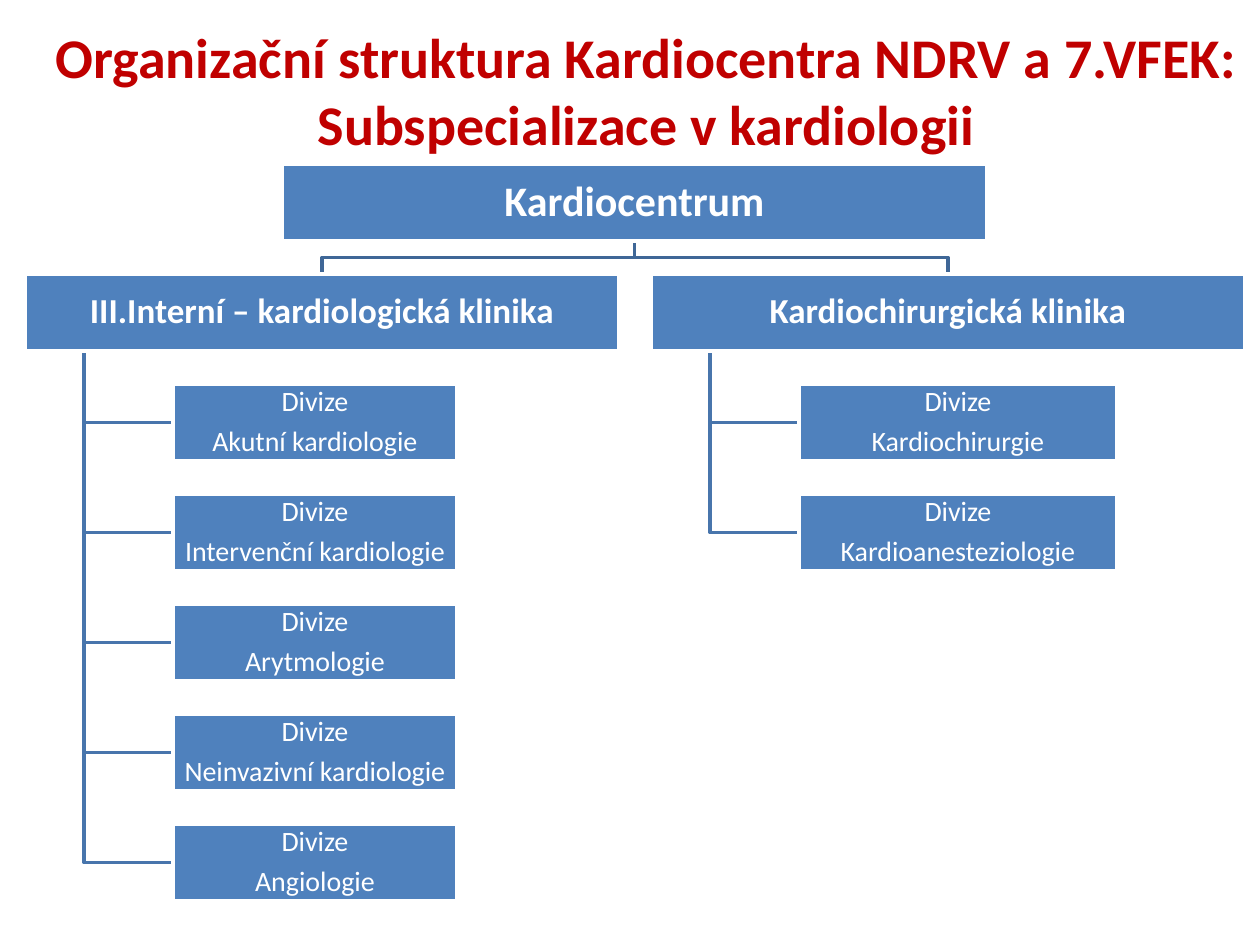
from pptx import Presentation
from pptx.dml.color import RGBColor
from pptx.enum.shapes import MSO_SHAPE as Shape
from pptx.enum.text import MSO_ANCHOR as Anchor, PP_ALIGN as Align
from pptx.util import Pt

TITLE = ["Organizační struktura Kardiocentra NDRV a 7.VFEK:",
         "Subspecializace v kardiologii"]
ROOT = "Kardiocentrum"
CLINICS = [
    dict(name="III.Interní – kardiologická klinika", left=25, width=284,
         units=["Akutní kardiologie", "Intervenční kardiologie", "Arytmologie",
                "Neinvazivní kardiologie", "Angiologie"]),
    dict(name="Kardiochirurgická klinika", left=651, width=318,
         units=["Kardiochirurgie", "Kardioanesteziologie"]),
]
COLORS = dict(title="C00000", box="4F81BD", white="FFFFFF",
              main="3F6797", branch="4875AC")

SCALE = 914400 / 126
BOX_H, PITCH = 77, 110
ROOT_X, ROOT_Y, ROOT_W = 282, 164, 705
CLINIC_Y, CLINIC_W = ROOT_Y + PITCH, 594
TRUNK_DX, UNIT_DX = 59, 148


def emu(px):
    return round(px * SCALE)


def color(name):
    return RGBColor.from_string(COLORS[name])


def write(frame, lines, size, bold, ink):
    for i, line in enumerate(lines):
        para = frame.paragraphs[0] if i == 0 else frame.add_paragraph()
        para.alignment = Align.CENTER
        run = para.add_run()
        run.text = line
        font = run.font
        font.name, font.size, font.bold = "Calibri", Pt(size), bold
        font.color.rgb = color(ink)


def add_box(shapes, x, y, w, lines, size, bold=False):
    box = shapes.add_shape(Shape.RECTANGLE, *map(emu, (x, y, w, BOX_H)))
    box.shadow.inherit = False
    box.fill.solid()
    box.fill.fore_color.rgb = color("box")
    box.line.color.rgb = color("white")
    box.line.width = Pt(2)
    frame = box.text_frame
    frame.word_wrap = True
    frame.vertical_anchor = Anchor.MIDDLE
    frame.margin_left = frame.margin_right = emu(1)
    frame.margin_top = frame.margin_bottom = emu(1)
    write(frame, lines, size, bold, "white")
    for para in frame.paragraphs:
        para.line_spacing = 0.9
        para.space_after = Pt(0.35 * size)


def add_path(shapes, points, ink):
    start, *rest = [(emu(x), emu(y)) for x, y in points]
    pen = shapes.build_freeform(*start)
    pen.add_line_segments(rest, close=False)
    path = pen.convert_to_shape()
    path.shadow.inherit = False
    path.fill.background()
    path.line.color.rgb = color(ink)
    path.line.width = Pt(2)


def add_links(shapes):
    mid, low = ROOT_X + ROOT_W / 2, ROOT_Y + BOX_H
    bend = (low + CLINIC_Y) / 2
    for clinic in CLINICS:
        top = clinic["left"] + CLINIC_W / 2
        add_path(shapes, [(mid, low), (mid, bend), (top, bend),
                          (top, CLINIC_Y)], "main")
        trunk = clinic["left"] + TRUNK_DX
        for row in range(len(clinic["units"]), 0, -1):
            y = CLINIC_Y + row * PITCH + BOX_H / 2
            add_path(shapes, [(trunk, CLINIC_Y + BOX_H), (trunk, y),
                              (clinic["left"] + UNIT_DX, y)], "branch")


def add_boxes(shapes):
    add_box(shapes, ROOT_X, ROOT_Y, ROOT_W, [ROOT], 24, True)
    for clinic in CLINICS:
        left = clinic["left"]
        add_box(shapes, left, CLINIC_Y, CLINIC_W, [clinic["name"]], 20, True)
        for row, unit in enumerate(clinic["units"], 1):
            add_box(shapes, left + UNIT_DX, CLINIC_Y + row * PITCH,
                    clinic["width"], ["Divize", unit], 16)


def main():
    deck = Presentation()
    deck.slide_width, deck.slide_height = emu(1260), emu(945)
    shapes = deck.slides.add_slide(deck.slide_layouts[6]).shapes
    add_links(shapes)
    add_boxes(shapes)
    title = shapes.add_textbox(*map(emu, (41, 16, 1211, 149))).text_frame
    title.word_wrap = False
    write(title, TITLE, 32, True, "title")
    deck.save("out.pptx")


if __name__ == "__main__":
    main()
